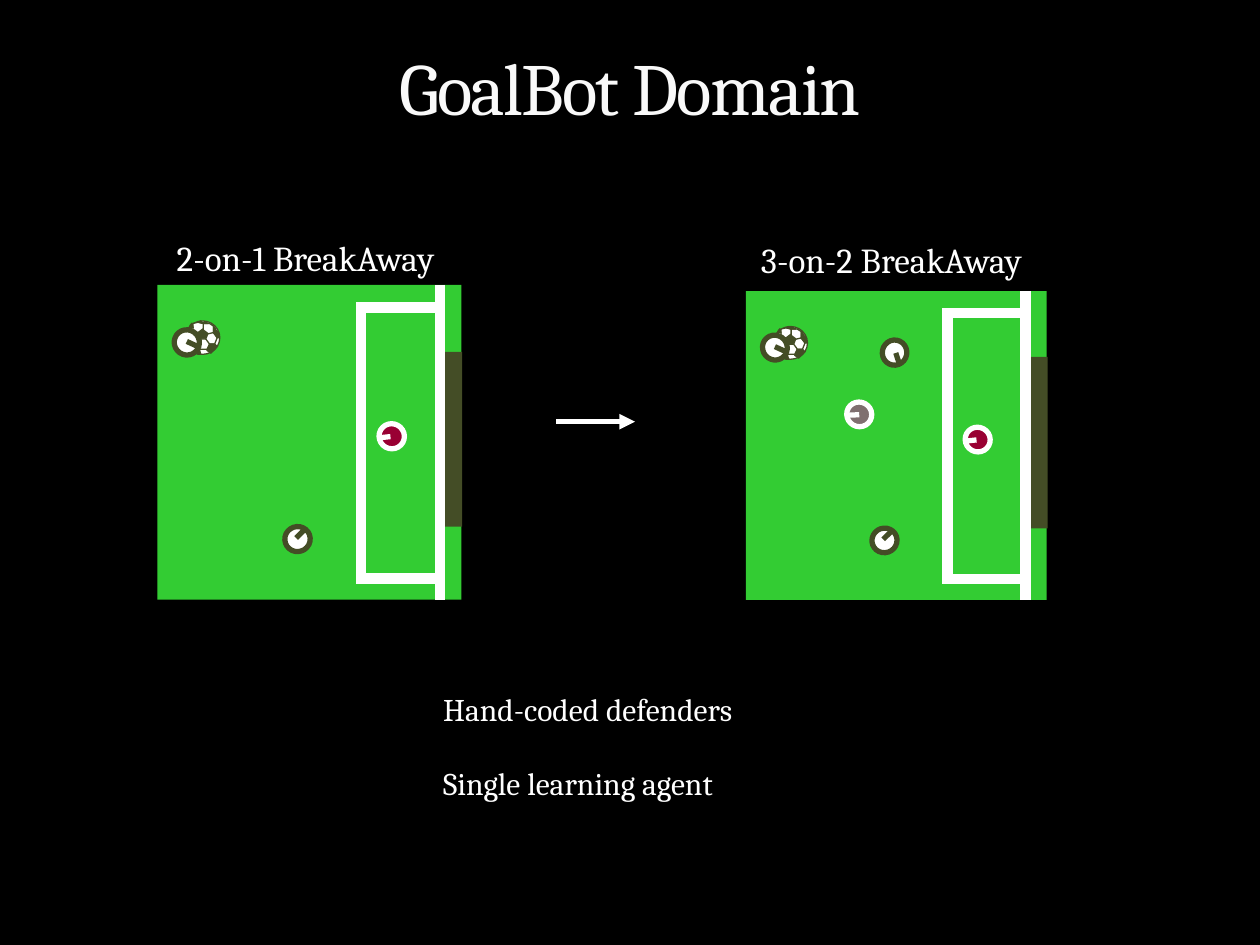
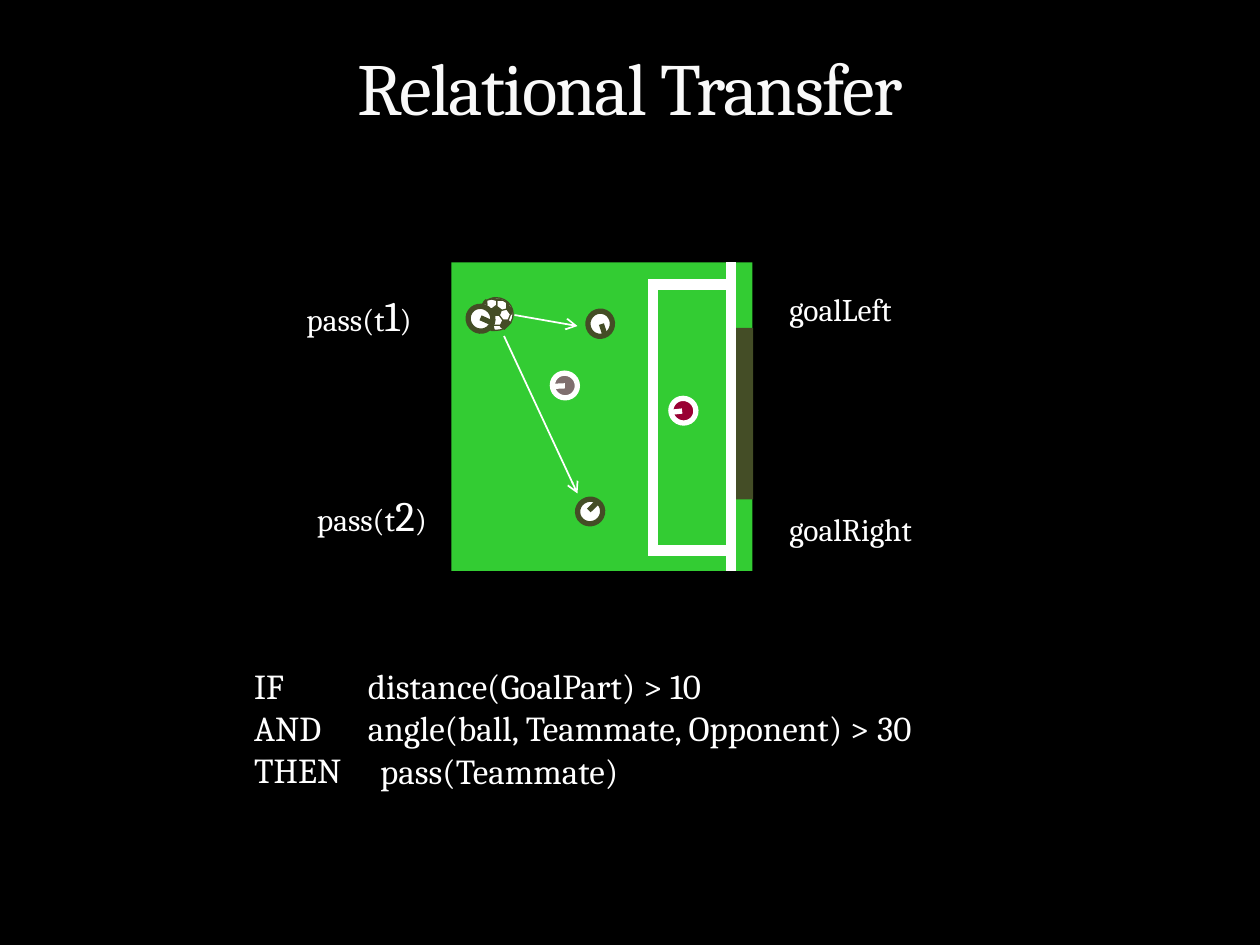
"""Builds two slides on transfer between simulated soccer tasks."""
from lxml import etree
from pptx import Presentation
from pptx.dml.color import RGBColor
from pptx.enum.shapes import MSO_CONNECTOR, MSO_SHAPE
from pptx.enum.text import MSO_ANCHOR, PP_ALIGN
from pptx.oxml.ns import qn
from pptx.util import Pt

STRAIGHT = MSO_CONNECTOR.STRAIGHT
RECT, OVAL = MSO_SHAPE.RECTANGLE, MSO_SHAPE.OVAL
PENTAGON, HEXAGON = MSO_SHAPE.REGULAR_PENTAGON, MSO_SHAPE.HEXAGON
LEFT, CENTER, BOTTOM = PP_ALIGN.LEFT, PP_ALIGN.CENTER, MSO_ANCHOR.BOTTOM

FONT = "Cambria"
BLACK, WHITE, TITLE = "000000", "FFFFFF", "F9F9F9"
GRASS, OLIVE, RED, GREY = "33CC33", "444D26", "990033", "7F6F6F"

TITLES = ["GoalBot Domain", "Relational Transfer"]

PITCH_W, PITCH_H, GOAL_X = 172, 176.4, 159.8
BALL_X, BALL_Y, BALL_UNIT = 15.8, 20.2, 0.72
PLAYERS = {
    "upper mate": (77.8, 28.1, 280.5, WHITE, OLIVE, (87.8, 41.8, 85.7, 35.3)),
    "keeper": (125.3, 77.8, 29, RED, WHITE, (125.3, 85.7, 131.8, 85)),
    "lower mate": (72, 135.4, 161, WHITE, OLIVE, (83.5, 136.8, 78.5, 141.8)),
    "defender": (57.6, 63.4, 29, GREY, WHITE, (57.6, 70.9, 64.8, 70.6)),
    "ball holder": (9.4, 25.2, 229.5, WHITE, OLIVE, (23, 34.6, 16.6, 31.7)),
}
BALL_SHAPES = [
    (OVAL, 0, 0, 27, 26, WHITE),
    (PENTAGON, 10, 7, 7, 7, OLIVE),
    (HEXAGON, 9, 14, 10, 8, WHITE),
]
BALL_PATCHES = [
    (WHITE, [(16, 14), (18, 9), (22, 9), (25, 13), (23, 18), (19, 18)]),
    (WHITE, [(14, 7), (14, 2), (19, 2), (22, 4), (22, 9), (18, 10)]),
    (WHITE, [(10, 9), (14, 6), (14, 2), (10, 1), (6, 2), (6, 8)]),
    (OLIVE, [(17, 23), (19, 18), (23, 18), (25, 20), (20, 25)]),
    (OLIVE, [(22, 4), (22, 9), (25, 13), (26, 13), (26, 9), (24, 7), (23, 5)]),
    (OLIVE, [(10, 1), (14, 2), (18, 2), (16, 1), (13, 1), (12, 0)]),
    (OLIVE, [(11, 22), (12, 26), (10, 26), (8, 25)]),
    (OLIVE, [(5, 2), (6, 5), (3, 5), (4, 3)]),
]
ALL = list(PLAYERS)
PITCHES = [
    (0, 426.2, 166.4, 1, 1, ALL),
    (0, 90, 162.8, 1.01, 1.02, ["keeper", "lower mate", "ball holder"]),
    (1, 258, 149.9, 1, 1, ALL),
]
ARROWS = [
    (0, 318, 241, 362.9, 241, 3, "triangle"),
    (1, 294, 180, 330, 186.3, 1, "arrow"),
    (1, 288, 192, 330, 282, 1, "arrow"),
]
TEXTS = [
    (0, 414, 132.8, 190.8, 31, CENTER, [[("3-on-2 BreakAway", 20)]]),
    (0, 79.2, 131.8, 190.8, 31, CENTER, [[("2-on-1 BreakAway", 20)]]),
    (0, 246.2, 391, 210, 29, LEFT, [[("Hand-coded defenders", 18)]]),
    (0, 246.2, 432.8, 210, 29, LEFT, [[("Single learning agent", 18)]]),
    (1, 138.2, 376.2, 456, 80, LEFT, [
        [("IF\tdistance(GoalPart) > 10", 20)],
        [("AND\tangle(ball, Teammate, Opponent) > 30", 20)],
        [("THEN", 20)]]),
    (1, 210.2, 424.8, 162, 31.7, LEFT, [[("pass(Teammate)", 20)]]),
    (1, 168, 162, 84, 36, LEFT, [[("pass(t", 18), ("1", 24), (")", 18)]]),
    (1, 174, 276, 84, 36, LEFT, [[("pass(t", 18), ("2", 24), (")", 18)]]),
    (1, 444, 162, 120, 29, LEFT, [[("goalLeft", 18)]]),
    (1, 444, 288, 120, 29, LEFT, [[("goalRight", 18)]]),
]


def style(shape, line, width, fill=None, tail=None):
    """Set line, optional fill and arrowhead, and remove the shadow."""
    if fill:
        shape.fill.solid()
        shape.fill.fore_color.rgb = RGBColor.from_string(fill)
    shape.line.color.rgb = RGBColor.from_string(line)
    shape.line.width = Pt(width)
    spPr = shape._element.spPr
    ln = spPr.find(qn("a:ln"))
    etree.SubElement(ln, qn("a:miter"), lim="800000")
    if tail:
        etree.SubElement(ln, qn("a:tailEnd"), type=tail)
    etree.SubElement(spPr, qn("a:effectLst"))


def write(p, text, size, color):
    """Append a formatted run to a paragraph and return it."""
    r = p.add_run()
    r.text = text
    for name, value in {"name": FONT, "size": Pt(size), "bold": False}.items():
        setattr(r.font, name, value)
    r.font.color.rgb = RGBColor.from_string(color)
    return r


prs = Presentation()
prs.slide_width, prs.slide_height = Pt(720), Pt(540)
slides = []
for title in TITLES:
    s = prs.slides.add_slide(prs.slide_layouts[5])
    slides.append(s)
    s.background.fill.solid()
    s.background.fill.fore_color.rgb = RGBColor.from_string(BLACK)
    box = {"left": 36, "top": 11.8, "width": 648, "height": 66.2}
    for name, value in box.items():
        setattr(s.shapes.title, name, Pt(value))
    tf = s.shapes.title.text_frame
    tf.vertical_anchor = BOTTOM
    p = tf.paragraphs[0]
    p.alignment = CENTER
    r = write(p, title, 42, TITLE)
    r.font._element.set("spc", "-100")

for index, x0, y0, fx, fy, players in PITCHES:
    shapes = slides[index].shapes
    grass = shapes.add_shape(RECT, Pt(x0), Pt(y0), Pt(PITCH_W * fx), Pt(PITCH_H * fy))
    style(grass, GRASS, 0, GRASS)
    grass.line.fill.background()
    goal = shapes.add_shape(RECT, Pt(x0 + GOAL_X * fx), Pt(y0 + 37.5 * fy),
                            Pt(12.6 * fx), Pt(98 * fy))
    style(goal, OLIVE, 0, OLIVE)
    goal.line.fill.background()
    area = shapes.add_shape(RECT, Pt(x0 + 115.2 * fx), Pt(y0 + 12.6 * fy),
                            Pt(44.6 * fx), Pt(152 * fy))
    area.fill.background()
    style(area, WHITE, 6)
    goal_line = shapes.add_connector(STRAIGHT, Pt(x0 + GOAL_X * fx), Pt(y0),
                                     Pt(x0 + GOAL_X * fx), Pt(y0 + PITCH_H * fy))
    style(goal_line, WHITE, 6)

    bx, by = x0 + BALL_X * fx, y0 + BALL_Y * fy
    ux, uy = BALL_UNIT * fx, BALL_UNIT * fy
    for kind, x, y, w, h, fill in BALL_SHAPES:
        sp = shapes.add_shape(kind, Pt(bx + x * ux), Pt(by + y * uy), Pt(w * ux), Pt(h * uy))
        style(sp, OLIVE, 0.75, fill)
    for fill, points in BALL_PATCHES:
        corners = [(Pt(bx + x * ux), Pt(by + y * uy)) for x, y in points]
        outline = shapes.build_freeform(*corners[0])
        outline.add_line_segments(corners[1:], close=True)
        style(outline.convert_to_shape(), OLIVE, 0.75, fill)

    for player in players:
        x, y, angle, fill, line, (x1, y1, x2, y2) = PLAYERS[player]
        body = shapes.add_shape(OVAL, Pt(x0 + x * fx), Pt(y0 + y * fy),
                                Pt(14.4 * fx), Pt(14 * fy))
        body.rotation = angle
        style(body, line, 3, fill)
        facing = shapes.add_connector(STRAIGHT, Pt(x0 + x1 * fx), Pt(y0 + y1 * fy),
                                      Pt(x0 + x2 * fx), Pt(y0 + y2 * fy))
        style(facing, line, 3)

for index, x1, y1, x2, y2, width, tail in ARROWS:
    arrow = slides[index].shapes.add_connector(STRAIGHT, Pt(x1), Pt(y1), Pt(x2), Pt(y2))
    style(arrow, WHITE, width, tail=tail)

for index, x, y, w, h, align, paragraphs in TEXTS:
    tf = slides[index].shapes.add_textbox(Pt(x), Pt(y), Pt(w), Pt(h)).text_frame
    tf.word_wrap = True
    for i, runs in enumerate(paragraphs):
        p = tf.add_paragraph() if i else tf.paragraphs[0]
        p.alignment = align
        if "\t" in runs[0][0]:
            tabs = etree.SubElement(p._p.get_or_add_pPr(), qn("a:tabLst"))
            etree.SubElement(tabs, qn("a:tab"), pos=str(Pt(65)), algn="l")
        for text, size in runs:
            write(p, text, size, WHITE)

prs.save("out.pptx")
